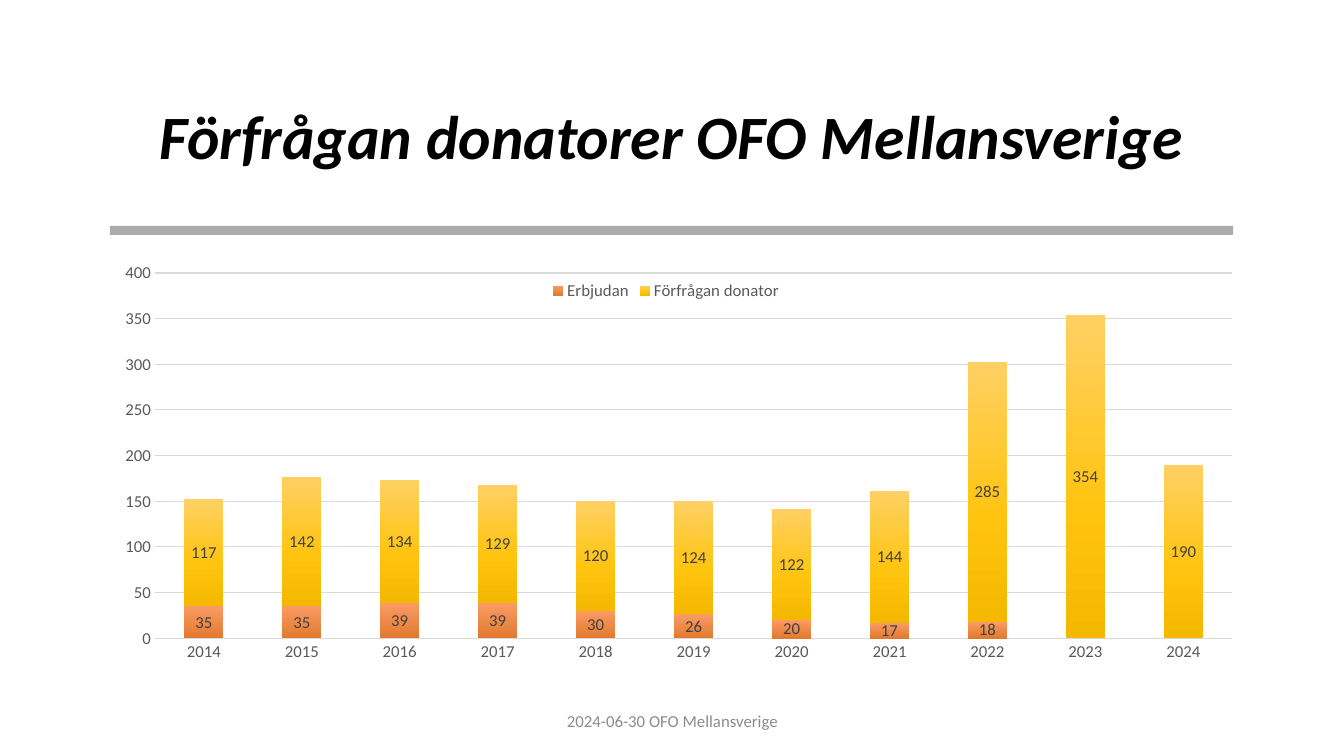
from pptx import Presentation
from pptx.chart.data import CategoryChartData
from pptx.dml.color import RGBColor
from pptx.enum.chart import XL_CHART_TYPE, XL_LABEL_POSITION, XL_LEGEND_POSITION, XL_TICK_MARK
from pptx.enum.shapes import MSO_SHAPE
from pptx.enum.text import MSO_ANCHOR, PP_ALIGN
from pptx.oxml import parse_xml
from pptx.oxml.ns import nsdecls, qn
from pptx.util import Inches, Pt

STACKED = XL_CHART_TYPE.COLUMN_STACKED
LABEL_CENTER = XL_LABEL_POSITION.CENTER
LEGEND_TOP = XL_LEGEND_POSITION.TOP
NO_TICK = XL_TICK_MARK.NONE
RECTANGLE = MSO_SHAPE.RECTANGLE
MIDDLE = MSO_ANCHOR.MIDDLE
CENTER = PP_ALIGN.CENTER

BLACK = RGBColor(0x00, 0x00, 0x00)
RULE_GRAY = RGBColor(0x80, 0x80, 0x80)
FOOTER_GRAY = RGBColor(0x8C, 0x8C, 0x8C)
AXIS_GRAY = RGBColor(0x59, 0x59, 0x59)
LABEL_GRAY = RGBColor(0x40, 0x40, 0x40)
GRID_GRAY = RGBColor(0xD9, 0xD9, 0xD9)
ORANGES = [RGBColor(0xFB, 0x9B, 0x64), RGBColor(0xEB, 0x88, 0x44), RGBColor(0xE3, 0x78, 0x2F)]
YELLOWS = [RGBColor(0xFF, 0xD0, 0x63), RGBColor(0xFF, 0xC4, 0x10), RGBColor(0xF5, 0xB8, 0x00)]
GRADIENT_STOPS = [0, 60, 100]

YEARS = [str(year) for year in range(2014, 2025)]
SERIES = [
    ("Erbjudan", [35, 35, 39, 39, 30, 26, 20, 17, 18, None, None], ORANGES),
    ("Förfrågan donator", [117, 142, 134, 129, 120, 124, 122, 144, 285, 354, 190], YELLOWS),
]


def set_layout(parent, index, **fractions):
    """Place a chart part by fractions of the chart's size."""
    for old in parent.findall(qn("c:layout")):
        parent.remove(old)
    target = '<c:layoutTarget val="inner"/>' if "w" in fractions else ""
    modes = "".join(f'<c:{key}Mode val="edge"/>' for key in "xy")
    values = "".join(f'<c:{key} val="{value}"/>' for key, value in fractions.items())
    parent.insert(index, parse_xml(
        f'<c:layout {nsdecls("c")}><c:manualLayout>{target}{modes}{values}'
        "</c:manualLayout></c:layout>"))


class SlideBuilder:
    font_name = "Calibri"

    def __init__(self, page):
        self.page = page

    def style_font(self, font, size, color, **formats):
        formats = {"name": self.font_name, "size": Pt(size), **formats}
        for name, value in formats.items():
            setattr(font, name, value)
        font.color.rgb = color

    def fill_text(self, box, text, size, color, paragraph_format, **formats):
        frame = box.text_frame
        frame.word_wrap = True
        frame.vertical_anchor = MIDDLE
        para = frame.paragraphs[0]
        for name, value in {"alignment": CENTER, **paragraph_format}.items():
            setattr(para, name, value)
        span = para.add_run()
        span.text = text
        self.style_font(span.font, size, color, **formats)

    def title(self, text, left, top, width, height):
        box = self.page.shapes.title
        places = {"left": left, "top": top, "width": width, "height": height}
        for name, value in places.items():
            setattr(box, name, Inches(value))
        self.fill_text(box, text, 44, BLACK, {"line_spacing": 0.9}, bold=True, italic=True)

    def text(self, text, size, color, *place):
        box = self.page.shapes.add_textbox(*map(Inches, place))
        self.fill_text(box, text, size, color, {"space_after": Pt(6)})

    def bar(self, color, opacity, *place):
        shape = self.page.shapes.add_shape(RECTANGLE, *map(Inches, place))
        shape.shadow.inherit = False
        shape.line.fill.background()
        shape.fill.solid()
        shape.fill.fore_color.rgb = color
        color_node = shape._element.spPr.find(".//" + qn("a:srgbClr"))
        color_node.append(parse_xml(f'<a:alpha {nsdecls("a")} val="{opacity * 1000}"/>'))

    def stacked_chart(self, *place):
        data = CategoryChartData()
        data.categories = YEARS
        for name, values, _ in SERIES:
            data.add_series(name, values)
        chart = self.page.shapes.add_chart(STACKED, *map(Inches, place), data).chart
        self.style_font(chart.font, 10, BLACK)
        chart.has_title = False
        plot = chart.plots[0]
        for name, value in {"gap_width": 150, "overlap": 100, "vary_by_categories": False}.items():
            setattr(plot, name, value)
        for series, (_, _, colors) in zip(plot.series, SERIES):
            self.style_series(series, colors)
        self.style_axes(chart)
        chart.has_legend = True
        chart.legend.position = LEGEND_TOP
        chart.legend.include_in_layout = True
        self.style_font(chart.legend.font, 12, AXIS_GRAY)
        set_layout(chart.legend._element, 1, x=0.39, y=0.03)
        plot_area = chart._chartSpace.chart.plotArea
        set_layout(plot_area, 0, x=0.04, y=0.02, w=0.96, h=0.92)

    def style_series(self, series, colors):
        stops = "".join(
            f'<a:gs pos="{stop * 1000}"><a:srgbClr val="{color}"/></a:gs>'
            for stop, color in zip(GRADIENT_STOPS, colors))
        series._element.get_or_add_spPr().append(parse_xml(
            f'<a:gradFill {nsdecls("a")} rotWithShape="1"><a:gsLst>{stops}</a:gsLst>'
            '<a:lin ang="5400000" scaled="0"/></a:gradFill>'))
        series.format.line.fill.background()
        series.invert_if_negative = False
        labels = series.data_labels
        labels.show_value = True
        labels.position = LABEL_CENTER
        self.style_font(labels.font, 12, LABEL_GRAY)

    def style_axes(self, chart):
        years, counts = chart.category_axis, chart.value_axis
        for axis in (years, counts):
            axis.major_tick_mark = axis.minor_tick_mark = NO_TICK
            self.style_font(axis.tick_labels.font, 12, AXIS_GRAY)
        for name, value in {"minimum_scale": 0, "maximum_scale": 400, "major_unit": 50}.items():
            setattr(counts, name, value)
        counts.has_major_gridlines = True
        counts.format.line.fill.background()
        for line, width in ((years.format.line, 1), (counts.major_gridlines.format.line, 0.75)):
            line.color.rgb = GRID_GRAY
            line.width = Pt(width)


def main():
    deck = Presentation()
    deck.slide_width, deck.slide_height = Inches(13.33), Inches(7.5)
    builder = SlideBuilder(deck.slides.add_slide(deck.slide_layouts[5]))
    builder.title("Förfrågan donatorer OFO Mellansverige", 0.95, 0.66, 11.43, 1.45)
    builder.bar(RULE_GRAY, 65, 1.09, 2.24, 11.14, 0.09)
    builder.text("2024-06-30 OFO Mellansverige", 12, FOOTER_GRAY, 4.42, 6.95, 4.5, 0.4)
    builder.stacked_chart(1.09, 2.61, 11.14, 3.96)
    deck.save("out.pptx")


if __name__ == "__main__":
    main()
